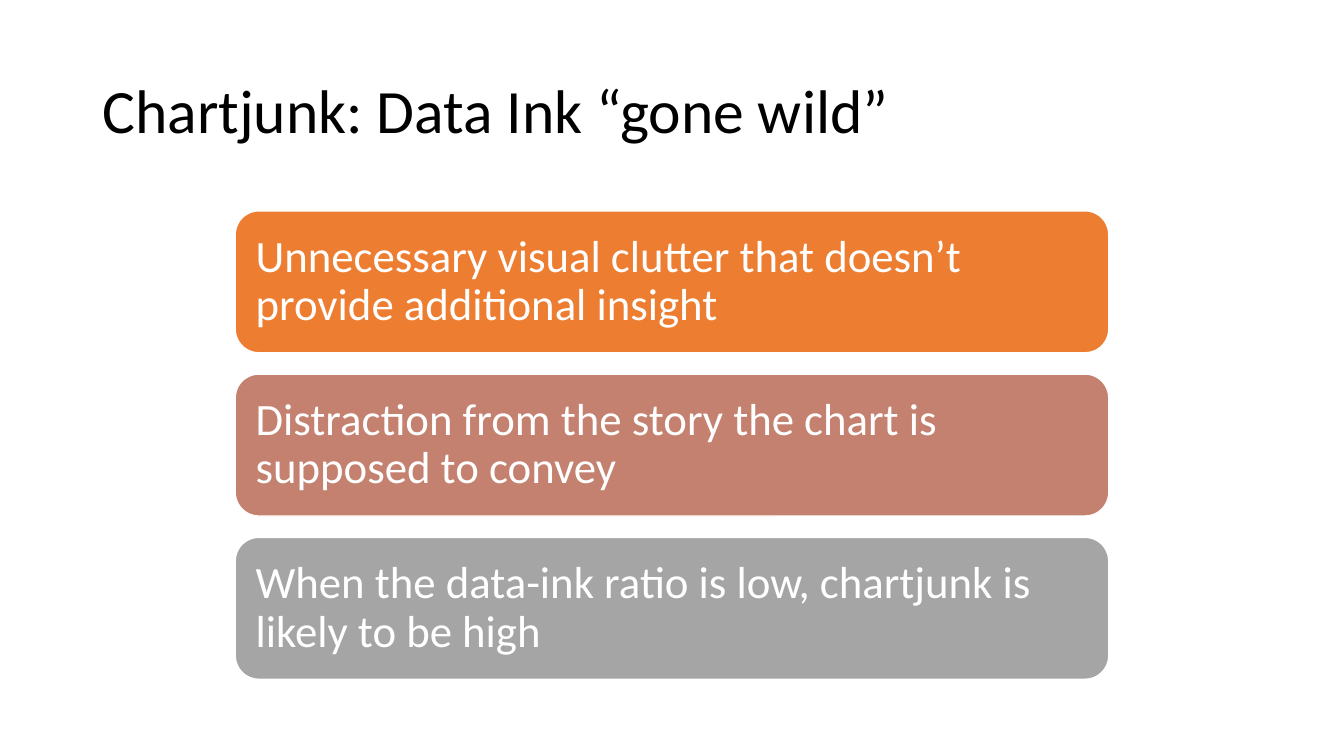
from pptx import Presentation
from pptx.dml.color import RGBColor
from pptx.enum.shapes import MSO_SHAPE
from pptx.enum.text import MSO_ANCHOR, PP_ALIGN
from pptx.util import Pt

ROUNDED = MSO_SHAPE.ROUNDED_RECTANGLE
MIDDLE = MSO_ANCHOR.MIDDLE
LEFT = PP_ALIGN.LEFT

TITLE = "Chartjunk: Data Ink “gone wild”"
CARDS = [
    ("Unnecessary visual clutter that doesn’t provide additional insight", "ED7D31"),
    ("Distraction from the story the chart is supposed to convey", "C48170"),
    ("When the data-ink ratio is low, chartjunk is likely to be high", "A5A5A5"),
]

SLIDE_SIZE = (960, 540)
TITLE_BOX = (66, 28.75, 828, 104.4)
CARD_LEFT, CARD_TOP, CARD_WIDTH, CARD_HEIGHT = 168, 150.6, 624, 101.4
CARD_GAP = 15.2
TITLE_MARGINS = (7.2, 3.6, 7.2, 3.6)
CARD_MARGINS = (9.6, 9.6, 9.6, 9.6)


def color(value):
    return RGBColor.from_string(value)


def set_text(shape, text, size, text_color, margins):
    frame = shape.text_frame
    frame.text = text
    left, top, right, bottom = map(Pt, margins)
    frame_format = {
        "word_wrap": True,
        "vertical_anchor": MIDDLE,
        "margin_left": left,
        "margin_top": top,
        "margin_right": right,
        "margin_bottom": bottom,
    }
    paragraph = frame.paragraphs[0]
    font = paragraph.runs[0].font
    formats = [
        (frame, frame_format),
        (paragraph, {"alignment": LEFT, "line_spacing": 0.9}),
        (font, {"name": "Calibri", "size": Pt(size)}),
    ]
    for target, values in formats:
        for name, value in values.items():
            setattr(target, name, value)
    font.color.rgb = color(text_color)


def add_card(slide, box, text, fill):
    card = slide.shapes.add_shape(ROUNDED, *map(Pt, box))
    card.shadow.inherit = False
    card.fill.solid()
    card.fill.fore_color.rgb = color(fill)
    card.line.color.rgb = color("FFFFFF")
    card.line.width = Pt(1)
    set_text(card, text, 32, "FFFFFF", CARD_MARGINS)


def main():
    presentation = Presentation()
    presentation.slide_width, presentation.slide_height = map(Pt, SLIDE_SIZE)
    slide = presentation.slides.add_slide(presentation.slide_layouts[5])

    title = slide.shapes.title
    title.left, title.top, title.width, title.height = map(Pt, TITLE_BOX)
    set_text(title, TITLE, 44, "000000", TITLE_MARGINS)

    for index, (text, fill) in enumerate(CARDS):
        top = CARD_TOP + index * (CARD_HEIGHT + CARD_GAP)
        add_card(slide, (CARD_LEFT, top, CARD_WIDTH, CARD_HEIGHT), text, fill)

    presentation.save("out.pptx")


if __name__ == "__main__":
    main()
